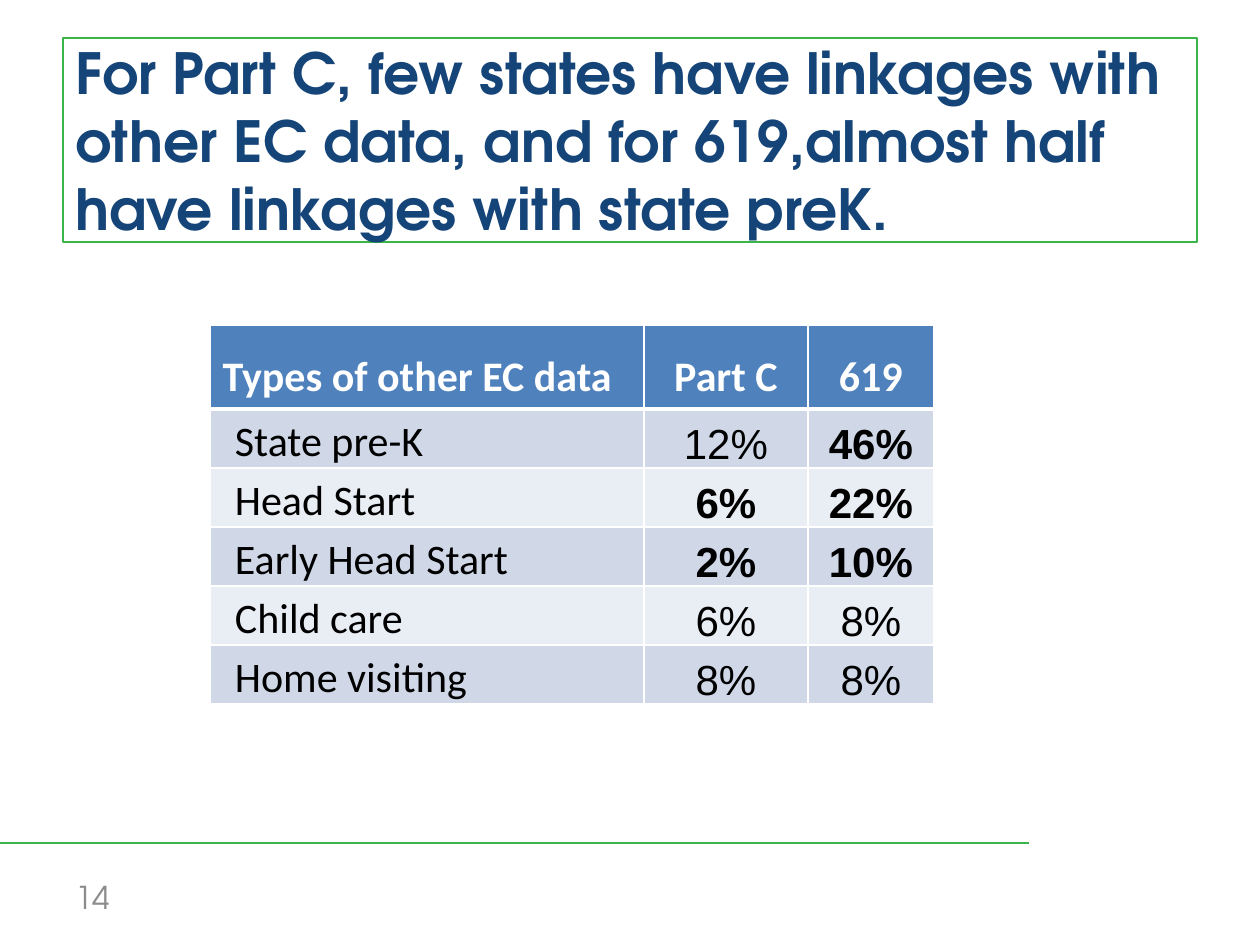
from lxml.etree import SubElement
from pptx import Presentation
from pptx.dml.color import RGBColor
from pptx.enum.shapes import MSO_CONNECTOR
from pptx.enum.text import MSO_ANCHOR, MSO_AUTO_SIZE, PP_ALIGN
from pptx.oxml.ns import qn
from pptx.util import Pt

EMU_PER_PX = 914400 // 126
COLORS = {
    "rule": "39B54A", "title": "154578", "number": "8C8C8C",
    "header": "4F81BD", "odd": "D0D8E8", "even": "E9EDF4",
    "white": "FFFFFF", "black": "000000",
}
HEADINGS = ["Types of other EC data", "Part C", "619"]
LINKAGES = [
    ("State pre-K", "12%", "46%"),
    ("Head Start", "6%", "22%"),
    ("Early Head Start", "2%", "10%"),
    ("Child care", "6%", "8%"),
    ("Home visiting", "8%", "8%"),
]
EMPHASIZED = {"46%", "22%", "10%", "2%"}
EMPHASIZED_CELLS = {(2, 1)}  # Head Start, Part C
COLUMN_WIDTHS = [434, 164, 126]
HEADER_HEIGHT, ROW_HEIGHT = 84, 59


def px(length):
    return length * EMU_PER_PX


def rgb(name):
    return RGBColor.from_string(COLORS[name])


def write(frame, text, *, size, font, color, bold=False, align=PP_ALIGN.LEFT,
          spacing=0, indent=0):
    paragraph = frame.paragraphs[0]
    paragraph.alignment = align
    paragraph.space_before = paragraph.space_after = Pt(spacing)
    if indent:
        properties = paragraph._p.get_or_add_pPr()
        properties.set("marL", str(px(indent)))
        properties.set("indent", "0")
    run = paragraph.add_run()
    run.text = text
    run.font.size = Pt(size)
    run.font.name = font
    run.font.bold = bold
    run.font.color.rgb = rgb(color)


def add_title(slide, text):
    title = slide.shapes.title
    title.left, title.top, title.width, title.height = map(px, (63, 38, 1134, 204))
    title.line.color.rgb = rgb("rule")
    title.line.width = Pt(1)
    frame = title.text_frame
    frame.word_wrap = True
    frame.auto_size = MSO_AUTO_SIZE.NONE
    frame.vertical_anchor = MSO_ANCHOR.MIDDLE
    write(frame, text, size=32.4, font="TeX Gyre Adventor", color="title", bold=True)


def add_footer_rule(slide):
    rule = slide.shapes.add_connector(
        MSO_CONNECTOR.STRAIGHT, 0, px(843), px(1029), px(843))
    rule.line.color.rgb = rgb("rule")
    rule.line.width = Pt(1.5)
    SubElement(rule._element.spPr, qn("a:effectLst"))


def add_page_number(slide, number):
    frame = slide.shapes.add_textbox(*map(px, (63, 872, 294, 50))).text_frame
    frame.word_wrap = True
    frame.vertical_anchor = MSO_ANCHOR.MIDDLE
    write(frame, number, size=18, font="TeX Gyre Adventor", color="number")


def set_borders(cell, **widths):
    """Draw white borders; widths in points are keyed L, R, T and B."""
    properties = cell._tc.get_or_add_tcPr()
    for side in "LRTB":
        border = SubElement(properties, qn(f"a:ln{side}"), w=str(Pt(widths.get(side, 1))))
        fill = SubElement(border, qn("a:solidFill"))
        SubElement(fill, qn("a:srgbClr"), val=COLORS["white"])


def format_cell(cell, fill, **borders):
    set_borders(cell, **borders)
    cell.fill.solid()
    cell.fill.fore_color.rgb = rgb(fill)
    cell.vertical_anchor = MSO_ANCHOR.BOTTOM


def fill_header(table):
    for column, heading in enumerate(HEADINGS):
        cell = table.cell(0, column)
        format_cell(cell, "header", B=3)
        write(cell.text_frame, heading, size=24, font="Calibri", color="white",
              bold=True, align=PP_ALIGN.CENTER if column else PP_ALIGN.LEFT)


def fill_row(table, row, values):
    for column, value in enumerate(values):
        cell = table.cell(row, column)
        format_cell(cell, "odd" if row % 2 else "even", T=3 if row == 1 else 1)
        cell.margin_left = cell.margin_right = px(10)
        cell.margin_top = cell.margin_bottom = 0
        write(cell.text_frame, value, size=24, color="black", spacing=1,
              font="Arial" if column else "Calibri",
              bold=value in EMPHASIZED or (row, column) in EMPHASIZED_CELLS,
              align=PP_ALIGN.CENTER if column else PP_ALIGN.LEFT,
              indent=0 if column else 15)


def add_linkage_table(slide):
    height = HEADER_HEIGHT + ROW_HEIGHT * len(LINKAGES)
    table = slide.shapes.add_table(
        len(LINKAGES) + 1, len(HEADINGS),
        px(210), px(325), px(sum(COLUMN_WIDTHS)), px(height)).table
    for column, width in zip(table.columns, COLUMN_WIDTHS):
        column.width = px(width)
    for index, row in enumerate(table.rows):
        row.height = px(ROW_HEIGHT if index else HEADER_HEIGHT)
    fill_header(table)
    for row, values in enumerate(LINKAGES, start=1):
        fill_row(table, row, values)


def main():
    deck = Presentation()
    deck.slide_width, deck.slide_height = px(1260), px(945)
    slide = deck.slides.add_slide(deck.slide_layouts[5])
    add_footer_rule(slide)
    add_page_number(slide, "14")
    add_title(slide, "For Part C, few states have linkages with other EC data, "
                     "and for 619,almost half have linkages with state preK.")
    add_linkage_table(slide)
    deck.save("out.pptx")


if __name__ == "__main__":
    main()
